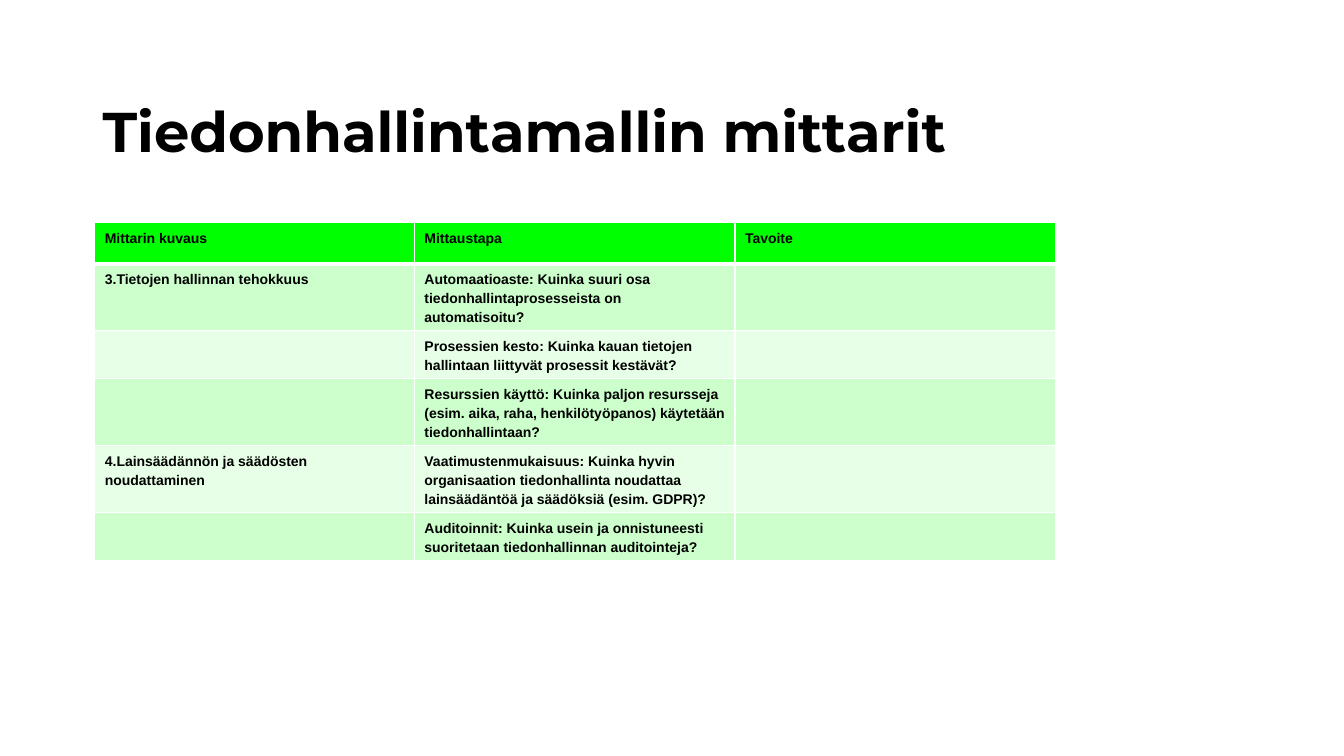
from dataclasses import dataclass

from lxml.etree import SubElement
from pptx import Presentation
from pptx.dml.color import RGBColor
from pptx.enum.text import MSO_ANCHOR, PP_ALIGN
from pptx.oxml.ns import qn
from pptx.slide import Slide
from pptx.table import _Cell as Cell
from pptx.text.text import _Paragraph as Paragraph
from pptx.util import Pt

EMU_PER_PX = 9144  # 100 px to the inch


@dataclass(frozen=True)
class Theme:
    text: str = "000000"
    border: str = "FFFFFF"
    header: str = "00FF00"
    bands: tuple[str, str] = ("CCFFCC", "E7FFE7")
    title_font: str = "Montserrat"
    body_font: str = "Arial"
    title_size: int = 40
    body_size: int = 10
    body_leading: float = 13.5
    thin: int = 1
    thick: int = 3


@dataclass(frozen=True)
class Metric:
    description: str
    method: str
    target: str = ""


THEME = Theme()
HEADER = Metric("Mittarin kuvaus", "Mittaustapa", "Tavoite")
METRICS = [
    Metric("3.Tietojen hallinnan tehokkuus",
           "Automaatioaste: Kuinka suuri osa tiedonhallintaprosesseista on automatisoitu?"),
    Metric("", "Prosessien kesto: Kuinka kauan tietojen hallintaan liittyvät prosessit kestävät?"),
    Metric("", "Resurssien käyttö: Kuinka paljon resursseja (esim. aika, raha, "
               "henkilötyöpanos) käytetään tiedonhallintaan?"),
    Metric("4.Lainsäädännön ja säädösten noudattaminen",
           "Vaatimustenmukaisuus: Kuinka hyvin organisaation tiedonhallinta noudattaa "
           "lainsäädäntöä ja säädöksiä (esim. GDPR)?"),
    Metric("", "Auditoinnit: Kuinka usein ja onnistuneesti suoritetaan "
               "tiedonhallinnan auditointeja?"),
]
COLUMN_WIDTHS = (317, 318, 318)
ROW_HEIGHT = 41


def px(n: int) -> int:
    return n * EMU_PER_PX


def style_runs(p: Paragraph, font: str, size: int) -> None:
    for r in p.runs:
        r.font.name = font
        r.font.size = Pt(size)
        r.font.bold = True
        r.font.color.rgb = RGBColor.from_string(THEME.text)


def set_borders(cell: Cell, top: int, bottom: int) -> None:
    """Draw all four cell borders; top and bottom are widths in points."""
    tc_pr = cell._tc.get_or_add_tcPr()
    widths = {"lnL": THEME.thin, "lnR": THEME.thin, "lnT": top, "lnB": bottom}
    for side, width in widths.items():
        ln = SubElement(tc_pr, qn(f"a:{side}"), w=str(Pt(width)))
        SubElement(SubElement(ln, qn("a:solidFill")), qn("a:srgbClr"), val=THEME.border)


def fill_cell(cell: Cell, text: str, row: int) -> None:
    set_borders(cell,
                top=THEME.thick if row == 1 else THEME.thin,
                bottom=THEME.thick if row == 0 else THEME.thin)
    color = THEME.bands[(row - 1) % 2] if row else THEME.header
    cell.fill.solid()
    cell.fill.fore_color.rgb = RGBColor.from_string(color)
    if text:
        p = cell.text_frame.paragraphs[0]
        p.text = text
        p.line_spacing = Pt(THEME.body_leading)
        style_runs(p, THEME.body_font, THEME.body_size)


def add_title(s: Slide, text: str) -> None:
    tf = s.shapes.add_textbox(px(92), px(61), px(956), px(145)).text_frame
    tf.word_wrap = True
    tf.vertical_anchor = MSO_ANCHOR.MIDDLE
    tf.text = text
    p = tf.paragraphs[0]
    p.line_spacing = 0.9
    style_runs(p, THEME.title_font, THEME.title_size)


def add_metrics_table(s: Slide) -> None:
    rows = [HEADER, *METRICS]
    table = s.shapes.add_table(len(rows), len(COLUMN_WIDTHS), px(94), px(221),
                               px(sum(COLUMN_WIDTHS)), px(ROW_HEIGHT * len(rows))).table
    table.horz_banding = False
    for column, width in zip(table.columns, COLUMN_WIDTHS):
        column.width = px(width)
    for i, metric in enumerate(rows):
        for j, text in enumerate((metric.description, metric.method, metric.target)):
            fill_cell(table.cell(i, j), text, i)
    table.cell(1, 0).text_frame.paragraphs[0].alignment = PP_ALIGN.JUSTIFY


def main() -> None:
    prs = Presentation()
    prs.slide_width, prs.slide_height = px(1333), px(750)
    s = prs.slides.add_slide(prs.slide_layouts[6])
    add_title(s, "Tiedonhallintamallin mittarit")
    add_metrics_table(s)
    prs.save("out.pptx")


if __name__ == "__main__":
    main()
